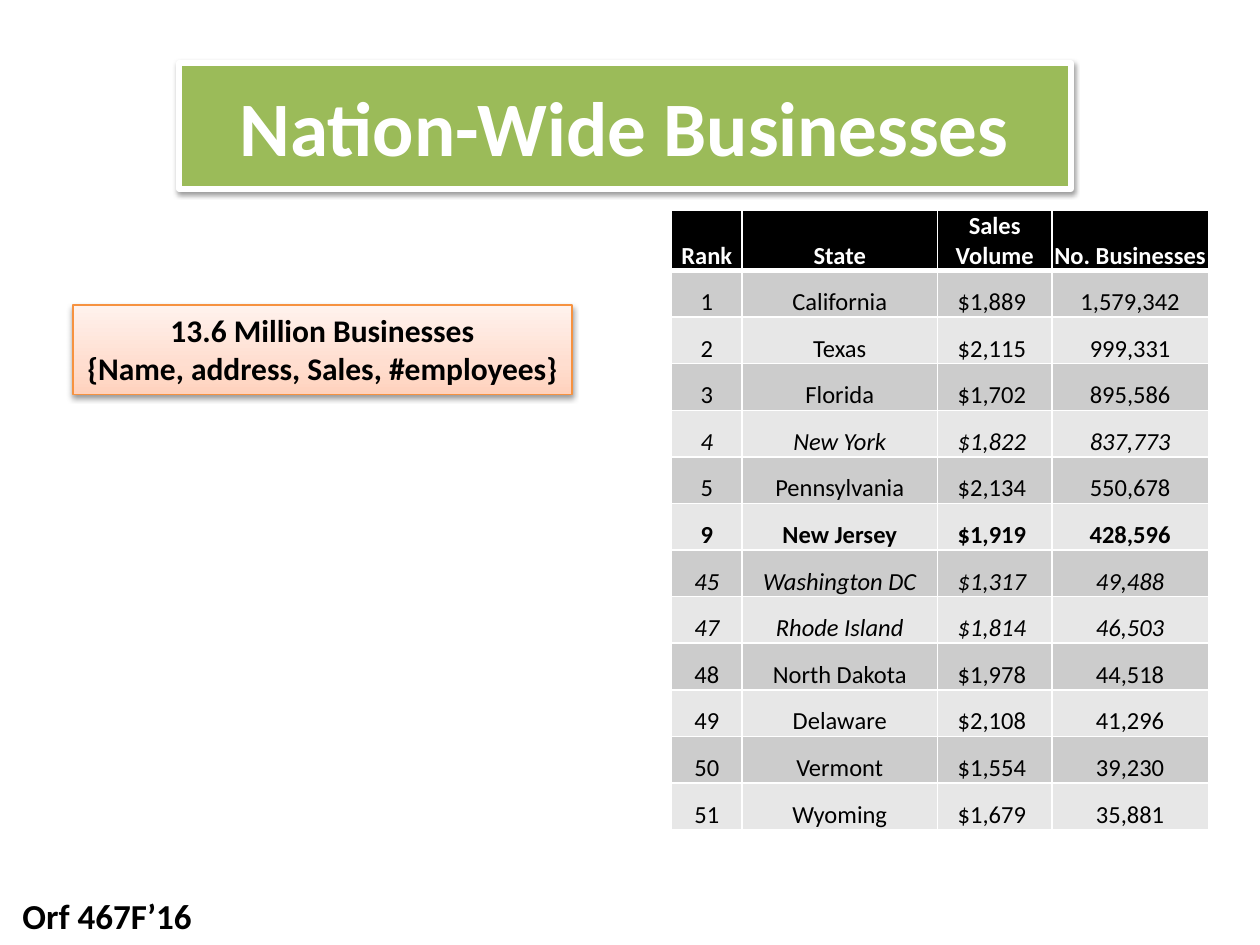
from lxml import etree
from pptx import Presentation, util as u
from pptx.dml.color import RGBColor
from pptx.enum import shapes, text
from pptx.oxml import parse_xml
from pptx.oxml.ns import nsdecls, qn

BLACK = RGBColor(0x00, 0x00, 0x00)
WHITE = RGBColor(0xFF, 0xFF, 0xFF)
GREEN = RGBColor(0x9B, 0xBB, 0x59)
ORANGE = RGBColor(0xF6, 0x92, 0x40)
BANDS = RGBColor(0xCC, 0xCC, 0xCC), RGBColor(0xE7, 0xE7, 0xE7)
PEACH = [
    (0, RGBColor(0xFF, 0xD2, 0xBD)),
    (35, RGBColor(0xFF, 0xDE, 0xD0)),
    (100, RGBColor(0xFF, 0xF2, 0xED)),
]

HEADS = ["Rank", "State", "Sales Volume", "No. Businesses"]
WIDTHS = [0.56, 1.55, 0.91, 1.24]
# Rank, state, sales volume, number of businesses, style
STATES = [
    (1, "California", 1889, 1579342, ""),
    (2, "Texas", 2115, 999331, ""),
    (3, "Florida", 1702, 895586, ""),
    (4, "New York", 1822, 837773, "italic"),
    (5, "Pennsylvania", 2134, 550678, ""),
    (9, "New Jersey", 1919, 428596, "bold"),
    (45, "Washington DC", 1317, 49488, "italic"),
    (47, "Rhode Island", 1814, 46503, "italic"),
    (48, "North Dakota", 1978, 44518, ""),
    (49, "Delaware", 2108, 41296, ""),
    (50, "Vermont", 1554, 39230, ""),
    (51, "Wyoming", 1679, 35881, ""),
]


def inches(*sizes):
    return [u.Inches(size) for size in sizes]


def write(frame, words, size=14, color=BLACK, bold=False, italic=False,
          align=text.PP_ALIGN.CENTER):
    frame.text = words
    para = frame.paragraphs[0]
    para.alignment = align
    for run in para.runs:
        font = run.font
        font.name, font.size = "Calibri", u.Pt(size)
        font.bold, font.italic = bold, italic
        font.color.rgb = color


def outline(shape, color, width):
    shape.line.color.rgb = color
    shape.line.width = u.Pt(width)


def shade(shape):
    """Soft shadow straight below the shape."""
    shape.shadow.inherit = False
    effects = shape._element.spPr.find(qn("a:effectLst"))
    effects.append(parse_xml(
        f'<a:outerShdw {nsdecls("a")} blurRad="40000" dist="20000" '
        'dir="5400000" rotWithShape="0"><a:srgbClr val="000000">'
        '<a:alpha val="38000"/></a:srgbClr></a:outerShdw>'))


def blend(shape, stops):
    """Gradient that runs from the bottom to the top."""
    marks = "".join(
        f'<a:gs pos="{pos * 1000}"><a:srgbClr val="{color}"/></a:gs>'
        for pos, color in stops)
    shape._element.spPr.append(parse_xml(
        f'<a:gradFill {nsdecls("a")} rotWithShape="1"><a:gsLst>{marks}'
        '</a:gsLst><a:lin ang="16200000" scaled="0"/></a:gradFill>'))


def border(cell, **widths):
    props = cell._tc.get_or_add_tcPr()
    for side in "LRTB":
        width = u.Pt(widths.get(side, 1))
        line = etree.SubElement(props, qn(f"a:ln{side}"), w=str(width))
        fill = etree.SubElement(line, qn("a:solidFill"))
        etree.SubElement(fill, qn("a:srgbClr"), val=str(WHITE))


def fill_row(cells, words, back, base=1, **style):
    for cell, word in zip(cells, words):
        cell.margin_left = cell.margin_right = u.Inches(0.01)
        cell.margin_top, cell.margin_bottom = inches(0.01, 0)
        cell.vertical_anchor = text.MSO_ANCHOR.BOTTOM
        border(cell, B=base)
        cell.fill.solid()
        cell.fill.fore_color.rgb = back
        write(cell.text_frame, word, **style)


def add_title(slide):
    title = slide.shapes.title
    title.left, title.top, title.width, title.height = inches(
        1.42, 0.5, 7.08, 1)
    title.fill.solid()
    title.fill.fore_color.rgb = GREEN
    outline(title, WHITE, 3)
    shade(title)
    title.text_frame.vertical_anchor = text.MSO_ANCHOR.MIDDLE
    write(title.text_frame, "Nation-Wide Businesses", size=44, color=WHITE,
          bold=True)


def add_states(slide):
    grid = slide.shapes.add_table(
        len(STATES) + 1, len(HEADS), *inches(5.33, 1.67, 4.26, 4.9)).table
    for col, width in zip(grid.columns, WIDTHS):
        col.width = u.Inches(width)
    for row in grid.rows:
        row.height = u.Inches(0.37)
    head, *body = grid.rows
    head.height = u.Inches(0.46)
    fill_row(head.cells, HEADS, BLACK, base=3, color=WHITE, bold=True)
    for i, (row, entry) in enumerate(zip(body, STATES)):
        rank, state, sales, count, style = entry
        words = [str(rank), state, f"${sales:,} ", f"{count:,}"]
        fill_row(row.cells, words, BANDS[i % 2],
                 bold=style == "bold", italic=style == "italic")


def add_note(slide):
    note = slide.shapes.add_shape(
        shapes.MSO_SHAPE.RECTANGLE, *inches(0.58, 2.42, 3.96, 0.71))
    blend(note, PEACH)
    outline(note, ORANGE, 0.75)
    shade(note)
    frame = note.text_frame
    frame.word_wrap = False
    frame.vertical_anchor = text.MSO_ANCHOR.TOP
    write(frame, "13.6 Million Businesses\v{Name, address, Sales, #employees}",
          size=18, bold=True)


def add_course(slide):
    box = slide.shapes.add_textbox(*inches(0.08, 7.05, 1.58, 0.44))
    box.text_frame.word_wrap = False
    write(box.text_frame, "Orf 467F’16", size=20, bold=True,
          align=text.PP_ALIGN.LEFT)


def main():
    deck = Presentation()
    deck.slide_width, deck.slide_height = inches(10, 7.5)
    slide = deck.slides.add_slide(deck.slide_layouts[5])
    add_course(slide)
    add_title(slide)
    add_states(slide)
    add_note(slide)
    deck.save("out.pptx")


if __name__ == "__main__":
    main()
